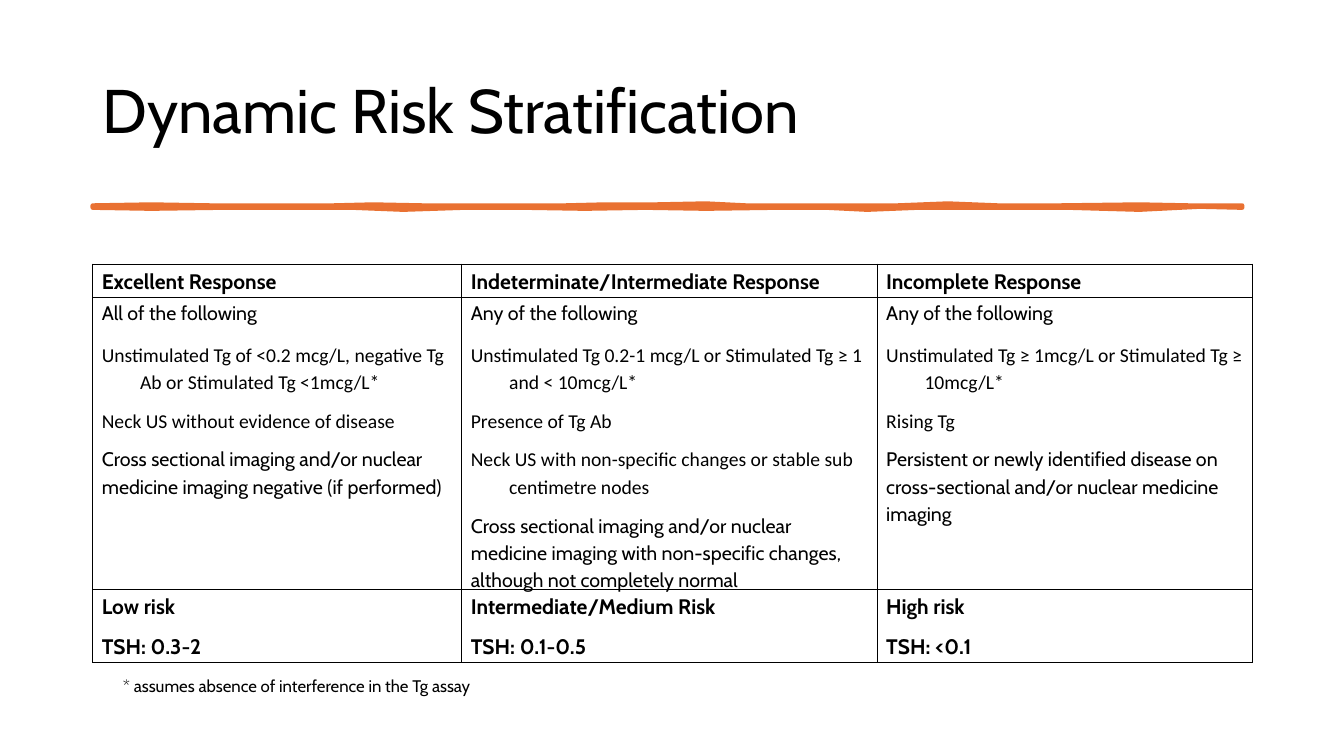
from dataclasses import dataclass

from lxml import etree
from pptx import Presentation
from pptx import util as u
from pptx.dml.color import RGBColor
from pptx.enum import text
from pptx.oxml import ns

WIDTH, HEIGHT = 13.33, 7.5
LEFT, SPAN = 0.92, 11.5
COLUMNS = (3.66, 4.12, 3.72)
ROWS = (0.33, 2.89, 0.73)


@dataclass(frozen=True)
class Theme:
    ink: str = "000000"
    accent: str = "E97132"
    font: str = "Cabin"
    list_font: str = "Calibri"
    title: int = 44
    heading: int = 15
    body: int = 14
    note: int = 12


THEME = Theme()

HEADINGS = ("Excellent Response", "Indeterminate/Intermediate Response",
            "Incomplete Response")
CRITERIA = (
    ("All of the following",
     ("Unstimulated Tg of <0.2 mcg/L, negative Tg Ab or Stimulated Tg <1mcg/L*",
      "Neck US without evidence of disease"),
     "Cross sectional imaging and/or nuclear medicine imaging negative (if performed)"),
    ("Any of the following",
     ("Unstimulated Tg 0.2-1 mcg/L or Stimulated Tg ≥ 1 and < 10mcg/L*",
      "Presence of Tg Ab",
      "Neck US with non-specific changes or stable sub centimetre nodes"),
     "Cross sectional imaging and/or nuclear medicine imaging with non-specific "
     "changes, although not completely normal"),
    ("Any of the following",
     ("Unstimulated Tg ≥ 1mcg/L or Stimulated Tg ≥ 10mcg/L*",
      "Rising Tg"),
     "Persistent or newly identified disease on cross-sectional and/or nuclear "
     "medicine imaging"),
)
RISKS = (("Low risk", "TSH: 0.3-2"),
         ("Intermediate/Medium Risk", "TSH: 0.1-0.5"),
         ("High risk", "TSH: <0.1"))

BRUSH_TOP = ((0.92, 2.04), (1.5, 2.03), (2.1, 2.04), (2.7, 2.04), (3.3, 2.04),
             (3.7, 2.03), (4.2, 2.04), (5.0, 2.04), (5.6, 2.04), (6.0, 2.03),
             (6.5, 2.03), (7.0, 2.02), (7.4, 2.04), (8.0, 2.04), (8.5, 2.04),
             (8.9, 2.04), (9.4, 2.02), (9.9, 2.04), (10.5, 2.04), (11.3, 2.03),
             (11.8, 2.04), (12.32, 2.04))
BRUSH_BOTTOM = ((12.32, 2.06), (11.9, 2.05), (11.3, 2.08), (10.6, 2.06),
                (10.0, 2.06), (9.5, 2.06), (9.1, 2.06), (8.6, 2.08), (8.2, 2.06),
                (7.7, 2.06), (7.0, 2.07), (6.4, 2.06), (5.8, 2.07), (5.2, 2.06),
                (4.6, 2.06), (4.0, 2.08), (3.5, 2.06), (2.9, 2.06), (2.2, 2.06),
                (1.5, 2.07), (0.92, 2.06))


def style(p, size, font=THEME.font, bold=False):
    p.font.size = u.Pt(size)
    p.font.name = font
    p.font.bold = bold
    p.font.color.rgb = RGBColor.from_string(THEME.ink)


def add_text(slide, x, y, w, h, words, size, anchor=text.MSO_ANCHOR.TOP):
    sp = slide.shapes.add_textbox(*(u.Inches(v) for v in (x, y, w, h)))
    tf = sp.text_frame
    tf.word_wrap = True
    tf.vertical_anchor = anchor
    p = tf.paragraphs[0]
    p.text = words
    style(p, size)
    return p


def add_brush_line(slide):
    points = [(u.Inches(x), u.Inches(y)) for x, y in BRUSH_TOP + BRUSH_BOTTOM]
    builder = slide.shapes.build_freeform(*points[0])
    builder.add_line_segments(points[1:], close=True)
    sp = builder.convert_to_shape()
    sp.shadow.inherit = False
    sp.fill.solid()
    sp.fill.fore_color.rgb = RGBColor.from_string(THEME.accent)
    sp.line.color.rgb = RGBColor.from_string(THEME.accent)
    sp.line.width = u.Pt(3.25)


def outline(cell):
    props = cell._tc.get_or_add_tcPr()
    for side in ("lnL", "lnR", "lnT", "lnB"):
        ln = etree.SubElement(props, ns.qn("a:" + side), w=str(u.Pt(1)))
        fill = etree.SubElement(ln, ns.qn("a:solidFill"))
        etree.SubElement(fill, ns.qn("a:srgbClr"), val=THEME.ink)
    cell.fill.background()


def add_cell_line(cell, words, size, font=THEME.font, bold=False, after=8, hang=0):
    tf = cell.text_frame
    p = tf.add_paragraph() if tf.text else tf.paragraphs[0]
    p.text = words
    p.line_spacing = 1.15
    p.space_after = u.Pt(after)
    if hang:
        props = p._p.get_or_add_pPr()
        props.set("marL", str(u.Inches(hang)))
        props.set("indent", str(-u.Inches(hang)))
    style(p, size, font, bold)


def fill_criteria(cell, intro, findings, imaging):
    add_cell_line(cell, intro, THEME.body, after=10)
    for finding in findings:
        add_cell_line(cell, finding, THEME.body, THEME.list_font, hang=0.38)
    add_cell_line(cell, imaging, THEME.body)


def add_risk_table(slide):
    frame = slide.shapes.add_table(
        len(ROWS), len(COLUMNS), u.Inches(LEFT), u.Inches(2.62),
        u.Inches(SPAN), u.Inches(sum(ROWS)))
    table = frame.table
    table.first_row = table.horz_banding = False
    for column, width in zip(table.columns, COLUMNS):
        column.width = u.Inches(width)
    for row, height in zip(table.rows, ROWS):
        row.height = u.Inches(height)
    for cell in table.iter_cells():
        cell.margin_left = cell.margin_right = u.Inches(0.09)
        cell.margin_top, cell.margin_bottom = u.Inches(0.01), 0
        outline(cell)
    for i, (heading, criteria, risk) in enumerate(zip(HEADINGS, CRITERIA, RISKS)):
        add_cell_line(table.cell(0, i), heading, THEME.heading, bold=True)
        fill_criteria(table.cell(1, i), *criteria)
        for words in risk:
            add_cell_line(table.cell(2, i), words, THEME.heading, bold=True)


def main():
    prs = Presentation()
    prs.slide_width, prs.slide_height = u.Inches(WIDTH), u.Inches(HEIGHT)
    slide = prs.slides.add_slide(prs.slide_layouts[6])
    title = add_text(slide, LEFT, 0.4, SPAN, 1.45, "Dynamic Risk Stratification",
                     THEME.title, text.MSO_ANCHOR.MIDDLE)
    title.line_spacing = 0.9
    add_brush_line(slide)
    add_risk_table(slide)
    add_text(slide, LEFT + 0.2, 6.65, 7.28, 0.61,
             "* assumes absence of interference in the Tg assay", THEME.note)
    prs.save("out.pptx")


if __name__ == "__main__":
    main()
